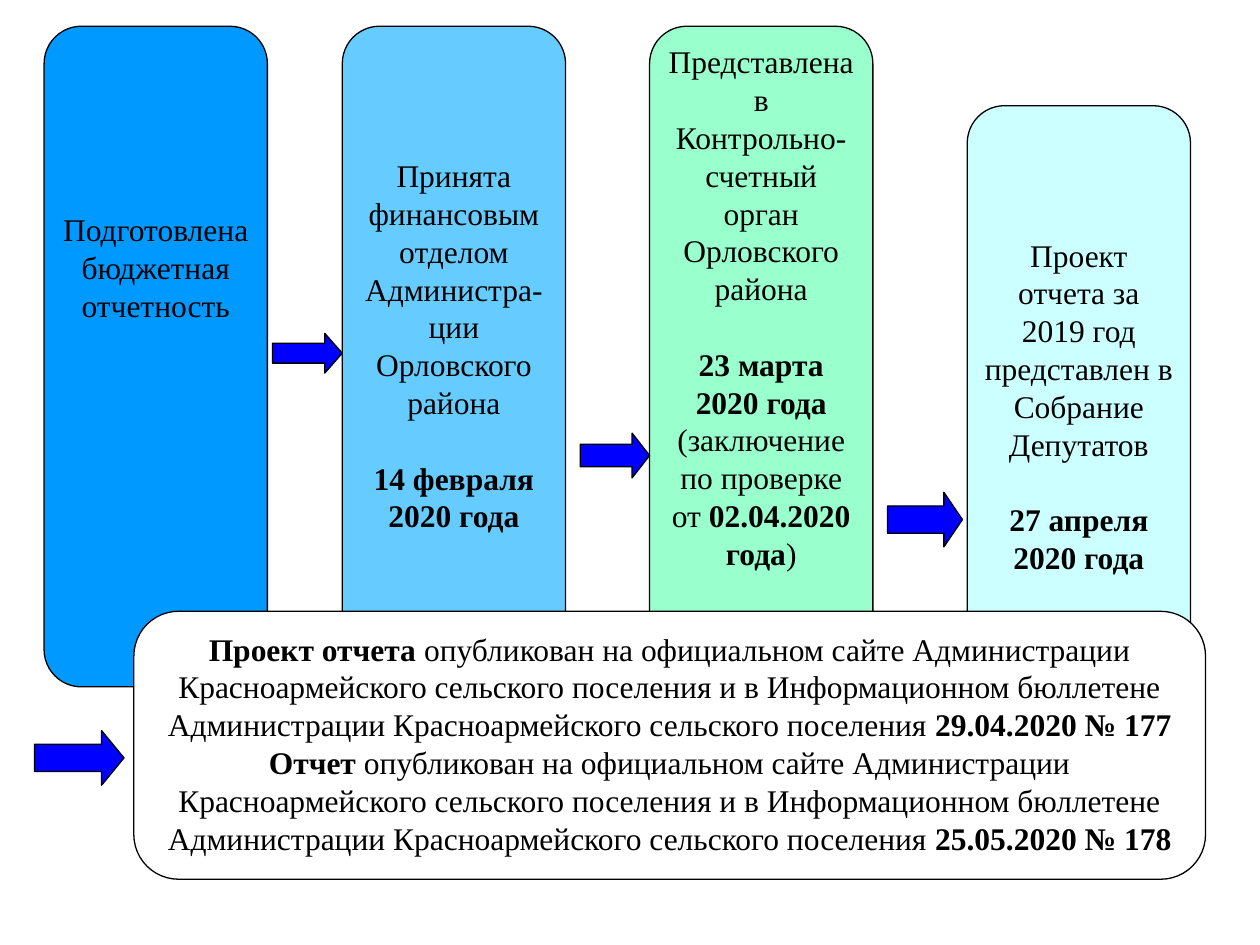
from pptx import Presentation
from pptx.dml.color import RGBColor
from pptx.enum import shapes, text
from pptx.util import Pt

LINE = 21.6  # height of one 18 pt line


def add_block(kind, box, fill, adjustments):
    block = slide.shapes.add_shape(kind, *[Pt(length) for length in box])
    for index, value in enumerate(adjustments):
        block.adjustments[index] = value
    block.shadow.inherit = False
    block.fill.solid()
    block.fill.fore_color.rgb = RGBColor.from_string(fill)
    block.line.color.rgb = RGBColor.from_string("000000")
    block.line.width = Pt(0.75)
    return block


def write(block, paragraphs, top=3, gaps=(), size=18, color="000000"):
    """Text between ** marks is bold; gaps lists paragraphs set one line lower."""
    frame = block.text_frame
    frame.word_wrap = True
    frame.vertical_anchor = text.MSO_ANCHOR.TOP
    frame.margin_left = frame.margin_right = frame.margin_bottom = Pt(3)
    frame.margin_top = Pt(top)
    for number, words in enumerate(paragraphs):
        paragraph = frame.add_paragraph() if number else frame.paragraphs[0]
        paragraph.alignment = text.PP_ALIGN.CENTER
        if number in gaps:
            paragraph.space_before = Pt(LINE)
        for part, piece in enumerate(words.split("**")):
            if piece:
                run = paragraph.add_run()
                run.text = piece
                run.font.name = "Times New Roman"
                run.font.size = Pt(size)
                run.font.bold = part % 2 == 1
                run.font.color.rgb = RGBColor.from_string(color)


presentation = Presentation()
presentation.slide_width, presentation.slide_height = Pt(720), Pt(540)
slide = presentation.slides.add_slide(presentation.slide_layouts[6])

# Stages of the report: left, top, fill, top inset, paragraphs, spaced paragraphs
stages = [
    (25.2, 15, "0099FF", 99,
     ["Подготовлена", "бюджетная", "отчетность"], ()),
    (195.6, 15, "66CCFF", 68,
     ["Принята", "финансовым отделом Администра-", "ции Орловского района",
      "**14 февраля**", "**2020 года**"], (3,)),
    (371.2, 15, "99FFCC", 3,
     ["Представлена в Контрольно-счетный орган Орловского района",
      "**23 марта 2020 года**",
      "(заключение по проверке от **02.04.2020 года**)"], (1,)),
    (552.7, 60.4, "CCFFFF", 68,
     ["Проект отчета за 2019 год представлен в Собрание", "Депутатов",
      "**27 апреля 2020 года**"], (2,)),
]
for left, top, fill, inset, paragraphs, gaps in stages:
    stage = add_block(shapes.MSO_SHAPE.ROUNDED_RECTANGLE,
                      (left, top, 127.6, 377.5), fill, [0.167])
    write(stage, paragraphs, top=inset, gaps=gaps)

# Publication of the draft and of the report
publication = add_block(shapes.MSO_SHAPE.ROUNDED_RECTANGLE,
                        (76.5, 349.3, 612.4, 153.1), "FFFFFF", [0.167])
place = ("опубликован на официальном сайте Администрации Красноармейского "
         "сельского поселения и в Информационном бюллетене Администрации "
         "Красноармейского сельского поселения")
write(publication, [f"**Проект отчета** {place} **29.04.2020 № 177**",
                    f"**Отчет** {place} **25.05.2020 № 178**"])

# Arrows between the stages: left, top, width, height, head length
arrows = [
    (155.7, 190.5, 39.9, 22.7, 0.44),
    (331.6, 247.5, 39.6, 25.6, 0.39),
    (507.2, 281.3, 42.8, 31.2, 0.34),
    (19.7, 417.5, 51.2, 31.2, 0.41),
]
for *box, head in arrows:
    add_block(shapes.MSO_SHAPE.RIGHT_ARROW, box, "0000FF", [0.5, head])

presentation.save("out.pptx")
